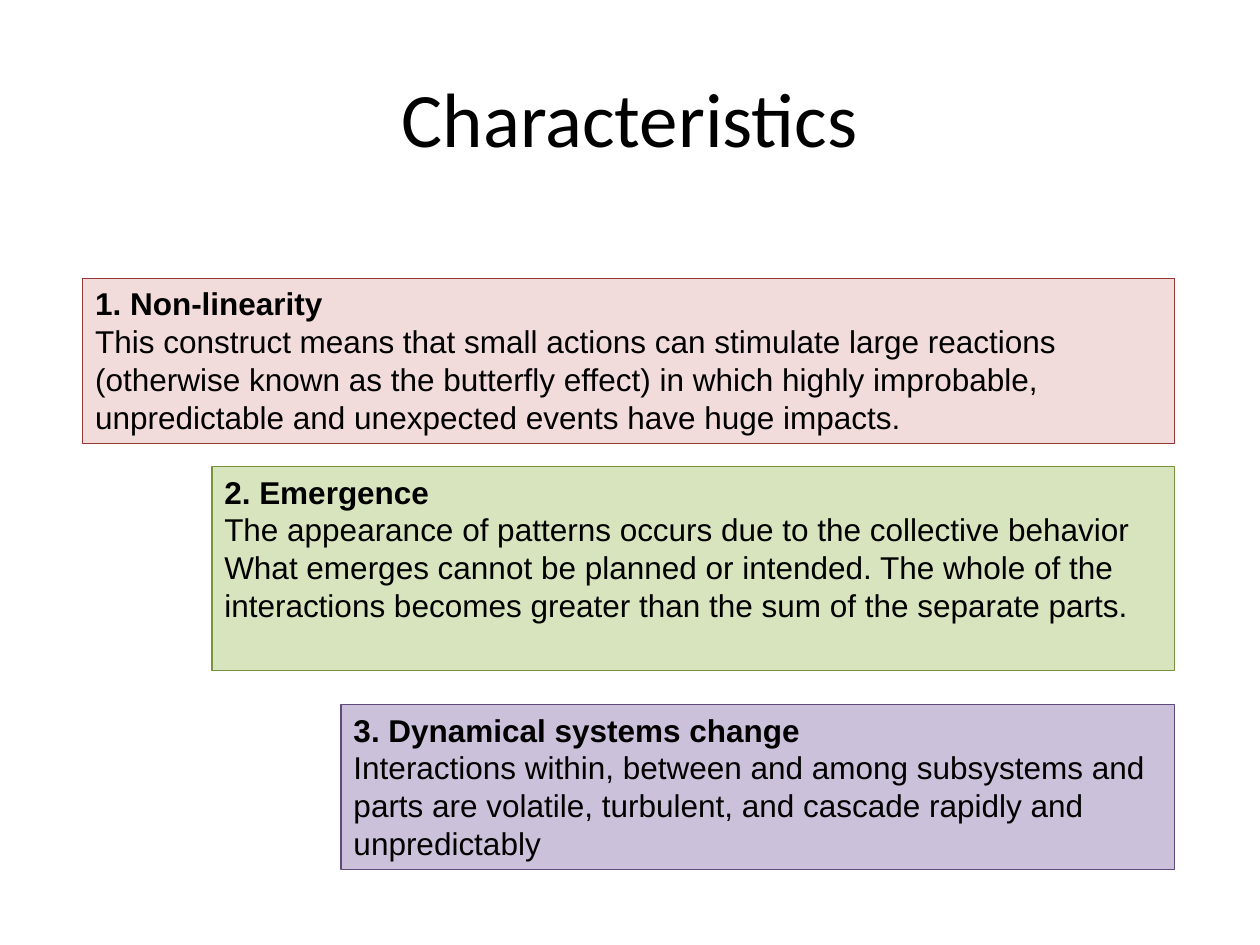
from pptx import Presentation
from pptx.dml.color import RGBColor
from pptx.enum.shapes import MSO_SHAPE
from pptx.enum.text import MSO_ANCHOR, MSO_AUTO_SIZE, PP_ALIGN
from pptx.util import Pt

BLACK = RGBColor(0x00, 0x00, 0x00)
ROSE, RED = RGBColor(0xF2, 0xDC, 0xDB), RGBColor(0x95, 0x37, 0x35)
LIME, GREEN = RGBColor(0xD7, 0xE4, 0xBD), RGBColor(0x77, 0x93, 0x3C)
LILAC, PURPLE = RGBColor(0xCC, 0xC1, 0xDA), RGBColor(0x60, 0x4A, 0x7B)

RIGHT_EDGE = 671.2
FIRST_LEFT = 47.3
INDENT = 73.8


def add_span(para, text, font="Arial", size=18, bold=False):
    span = para.add_run()
    span.text = text
    span.font.name = font
    span.font.size = Pt(size)
    span.font.bold = bold
    span.font.color.rgb = BLACK


deck = Presentation()
deck.slide_width, deck.slide_height = Pt(720), Pt(540)
page = deck.slides.add_slide(deck.slide_layouts[5])

title = page.shapes.title
title.left, title.top, title.width, title.height = Pt(36), Pt(21.6), Pt(648), Pt(90)
title.text_frame.vertical_anchor = MSO_ANCHOR.MIDDLE
title_para = title.text_frame.paragraphs[0]
title_para.alignment = PP_ALIGN.CENTER
add_span(title_para, "Characteristics", font="Calibri", size=44)

# top, height, fill, line, heading, description
characteristics = [
    (159, 94.5, ROSE, RED, "1. Non-linearity",
     "This construct means that small actions can stimulate large reactions "
     "(otherwise known as the butterfly effect) in which highly improbable, "
     "unpredictable and unexpected events have huge impacts."),
    (266.5, 116.5, LIME, GREEN, "2. Emergence",
     "The appearance of patterns occurs due to the collective behavior "
     "What emerges cannot be planned or intended. The whole of the "
     "interactions becomes greater than the sum of the separate parts."),
    (402.5, 94.5, LILAC, PURPLE, "3. Dynamical systems change",
     "Interactions within, between and among subsystems and parts are "
     "volatile, turbulent, and cascade rapidly and unpredictably"),
]

for step, (top, height, fill, line, heading, description) in enumerate(characteristics):
    left = FIRST_LEFT + step * INDENT
    box = page.shapes.add_shape(MSO_SHAPE.RECTANGLE, Pt(left), Pt(top),
                                Pt(RIGHT_EDGE - left), Pt(height))
    box.shadow.inherit = False
    box.fill.solid()
    box.fill.fore_color.rgb = fill
    box.line.color.rgb = line
    box.line.width = Pt(0.75)
    frame = box.text_frame
    frame.word_wrap = True
    frame.auto_size = MSO_AUTO_SIZE.NONE
    frame.vertical_anchor = MSO_ANCHOR.TOP
    para = frame.paragraphs[0]
    para.alignment = PP_ALIGN.LEFT
    add_span(para, heading, bold=True)
    para.add_line_break()
    add_span(para, description)

deck.save("out.pptx")
